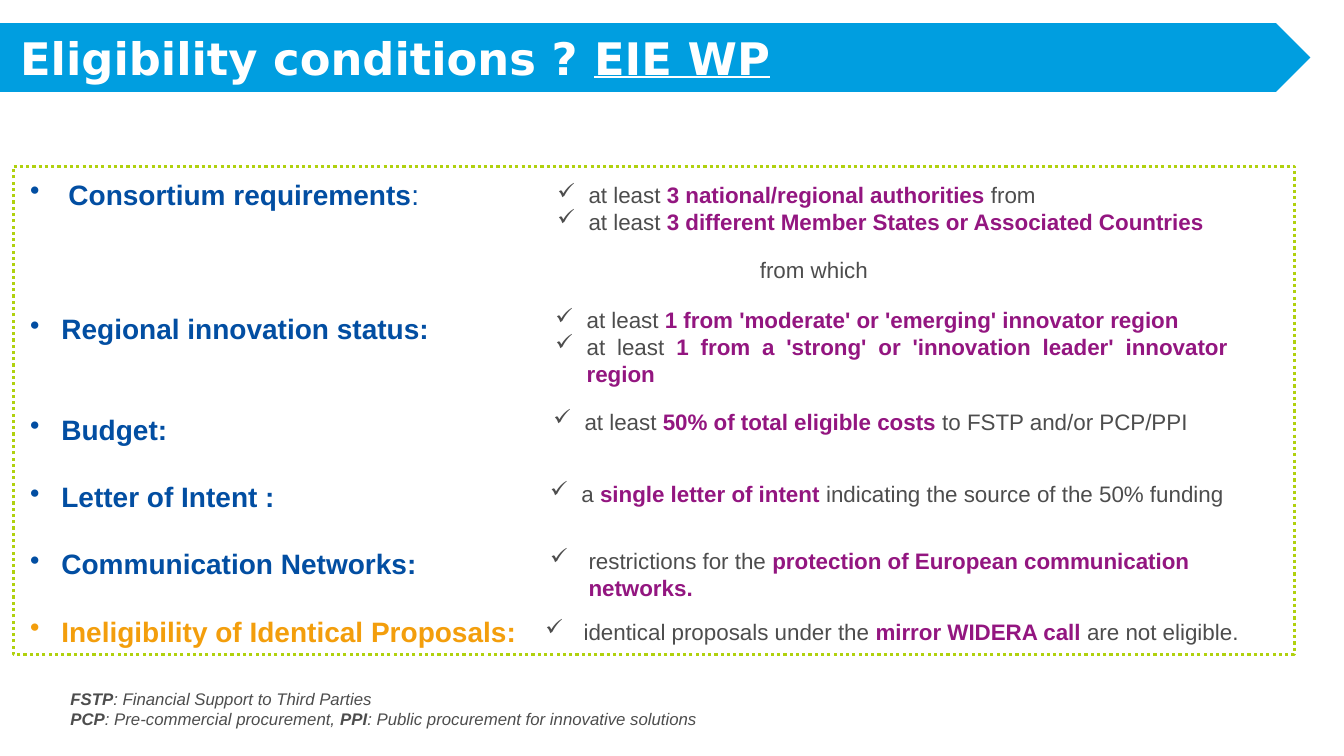
"""Build the slide on eligibility conditions for the EIE work programme."""
import pptx
import pptx.dml.color
import pptx.enum.dml
import pptx.enum.shapes
import pptx.enum.text
import pptx.oxml.ns
import pptx.util
from lxml import etree

COLORS = {"banner": "009EE0", "white": "FFFFFF", "frame": "B0D10E", "label": "024EA2",
          "warning": "F39E0C", "text": "4D4D4D", "key": "931680"}
KEY = {"color": "key", "bold": True}
TITLE = [("Eligibility conditions ? ", {}), ("EIE WP", {"underline": True})]

# Each label: runs, indent in inches, blank rows above
LABELS = [
    ([("Consortium requirements", {}), (":", {"bold": False})], 0.38, 0),
    ([("Regional innovation status:", {})], 0.31, 3),
    ([("Budget:", {})], 0.31, 2),
    ([("Letter of Intent :", {})], 0.31, 1),
    ([("Communication Networks:", {})], 0.31, 1),
    ([("Ineligibility of Identical Proposals:", {"color": "warning"})], 0.31, 1),
]
CONDITIONS = [
    ((40.73, 23.33, 51.75, 12.53), 0.31, True, [
        [("at least ", {}), ("3 national/regional authorities ", KEY), ("from", {})],
        [("at least ", {}), ("3 different Member States or Associated Countries", KEY)]]),
    ((40.58, 39.87, 51.53, 13.07), 0.31, True, [
        [("at least ", {}), ("1 from 'moderate' or 'emerging' innovator region", KEY)],
        [("at least ", {}),
         ("1 from a 'strong' or 'innovation leader' innovator region", KEY)]]),
    ((40.43, 53.33, 53.63, 4.93), 0.31, True, [
        [("at least ", {}), ("50% of total eligible costs ", KEY),
         ("to FSTP and/or PCP/PPI", {})]]),
    ((40.2, 62.8, 55.13, 4.93), 0.31, False, [
        [("a", {}), (" single letter of intent ", KEY),
         ("indicating the source of the 50% funding", {})]]),
    ((40.2, 71.73, 56.48, 4.93), 0.38, False, [
        [("restrictions for the ", {}),
         ("protection of European communication networks.", KEY)]]),
    ((39.83, 81.07, 56.48, 4.93), 0.38, False, [
        [("identical proposals under the ", {}), ("mirror WIDERA call ", KEY),
         ("are not eligible.", {})]]),
]
LINK = [("from which", {})]
ABBREVIATIONS = [
    [("FSTP", {"bold": True}), (": Financial Support to Third Parties", {})],
    [("PCP", {"bold": True}), (": Pre-commercial procurement, ", {}),
     ("PPI", {"bold": True}), (": Public procurement for innovative solutions", {})],
]
FRAME = (0.98, 22, 95.33, 64.53)
BANNER = (0, 3.07, 97.5, 9.07)
LABEL_BOX = (1.5, 22.8, 96.08, 63.6)
LINK_BOX = (55.8, 33.2, 15.45, 4.93)
ABBREVIATION_BOX = (4.5, 90.4, 60.53, 6.67)
LABEL_ROW = 24

prs = pptx.Presentation()
prs.slide_width = pptx.util.Inches(13.33)
prs.slide_height = pptx.util.Inches(7.5)
s = prs.slides.add_slide(prs.slide_layouts[6])


def rgb(name):
    """Return the named colour."""
    return pptx.dml.color.RGBColor.from_string(COLORS[name])


def place(box):
    """Turn percentages of the slide into left, top, width and height."""
    sides = (prs.slide_width, prs.slide_height) * 2
    return [round(side * share / 100) for side, share in zip(sides, box)]


def write(tf, runs, first=True, size=16, font="Arial", color="text", bold=False,
          italic=False, bullet=None, indent=0, justify=False, before=0):
    """Write one paragraph of formatted runs."""
    p = tf.paragraphs[0] if first else tf.add_paragraph()
    if bullet:
        pPr = p._p.get_or_add_pPr()
        pPr.set("marL", str(pptx.util.Inches(indent)))
        pPr.set("indent", str(-pptx.util.Inches(indent)))
        etree.SubElement(pPr, pptx.oxml.ns.qn("a:buChar")).set("char", bullet)
    align = pptx.enum.text.PP_ALIGN
    p.alignment = align.JUSTIFY if justify else align.LEFT
    if before:
        p.space_before = pptx.util.Pt(before)
    for text, style in runs:
        r = p.add_run()
        r.text = text
        r.font.name = font
        r.font.size = pptx.util.Pt(size)
        r.font.bold = style.get("bold", bold)
        r.font.italic = italic
        if style.get("underline"):
            r.font.underline = True
        r.font.color.rgb = rgb(style.get("color", color))


def add_text(box):
    """Add a wrapping text box and return its frame."""
    tf = s.shapes.add_textbox(*place(box)).text_frame
    tf.word_wrap = True
    return tf


def add_shape(kind, box):
    """Add a preset shape without shadow."""
    sp = s.shapes.add_shape(kind, *place(box))
    sp.shadow.inherit = False
    return sp


frame = add_shape(pptx.enum.shapes.MSO_SHAPE.RECTANGLE, FRAME)
frame.fill.background()
frame.line.color.rgb = rgb("frame")
frame.line.width = pptx.util.Pt(2.25)
frame.line.dash_style = pptx.enum.dml.MSO_LINE.ROUND_DOT

banner = add_shape(pptx.enum.shapes.MSO_SHAPE.PENTAGON, BANNER)
banner.fill.solid()
banner.fill.fore_color.rgb = rgb("banner")
banner.line.fill.background()
banner.text_frame.margin_left = pptx.util.Inches(0.2)
banner.text_frame.vertical_anchor = pptx.enum.text.MSO_ANCHOR.MIDDLE
write(banner.text_frame, TITLE, size=32, font="DejaVu Sans", color="white", bold=True)

tf = add_text(LABEL_BOX)
for i, (runs, indent, blank_rows) in enumerate(LABELS):
    write(tf, runs, first=i == 0, size=20, color="label", bold=True, bullet="•",
          indent=indent, justify=True, before=blank_rows * LABEL_ROW)

for box, indent, justify, paragraphs in CONDITIONS:
    tf = add_text(box)
    for i, runs in enumerate(paragraphs):
        write(tf, runs, first=i == 0, bullet="✓", indent=indent, justify=justify)

write(add_text(LINK_BOX), LINK)

tf = add_text(ABBREVIATION_BOX)
for i, runs in enumerate(ABBREVIATIONS):
    write(tf, runs, first=i == 0, size=12, italic=True)

prs.save("out.pptx")
